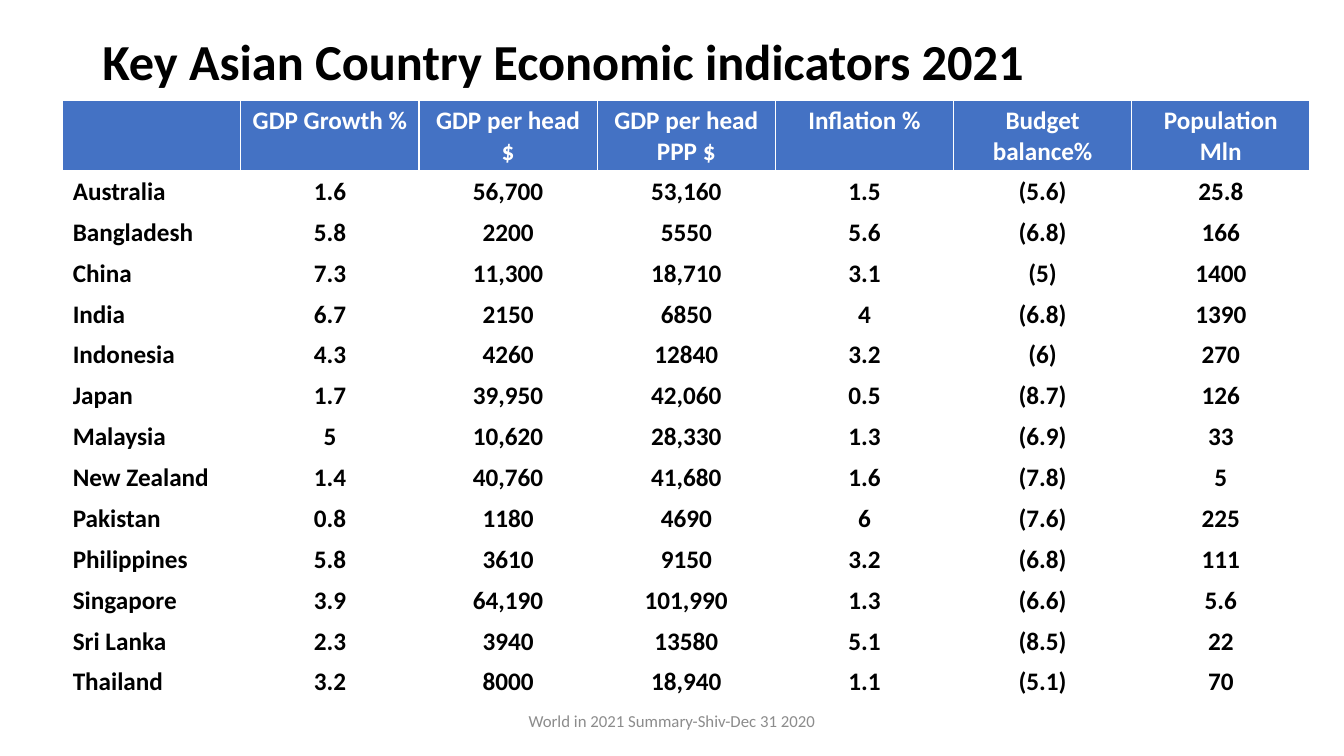
import pptx
import pptx.dml.color
import pptx.enum.text
import pptx.oxml
import pptx.oxml.ns
import pptx.util
from pptx.util import Cm

ALIGN = pptx.enum.text.PP_ALIGN
ANCHOR = pptx.enum.text.MSO_ANCHOR

HEADERS = ["", "GDP Growth %", "GDP per head $", "GDP per head PPP $",
           "Inflation %", "Budget balance%", "Population Mln"]
COUNTRIES = [
    ["Australia", "1.6", "56,700", "53,160", "1.5", "(5.6)", "25.8"],
    ["Bangladesh", "5.8", "2200", "5550", "5.6", "(6.8)", "166"],
    ["China", "7.3", "11,300", "18,710", "3.1", "(5)", "1400"],
    ["India", "6.7", "2150", "6850", "4", "(6.8)", "1390"],
    ["Indonesia", "4.3", "4260", "12840", "3.2", "(6)", "270"],
    ["Japan", "1.7", "39,950", "42,060", "0.5", "(8.7)", "126"],
    ["Malaysia", "5", "10,620", "28,330", "1.3", "(6.9)", "33"],
    ["New Zealand", "1.4", "40,760", "41,680", "1.6", "(7.8)", "5"],
    ["Pakistan", "0.8", "1180", "4690", "6", "(7.6)", "225"],
    ["Philippines", "5.8", "3610", "9150", "3.2", "(6.8)", "111"],
    ["Singapore", "3.9", "64,190", "101,990", "1.3", "(6.6)", "5.6"],
    ["Sri Lanka", "2.3", "3940", "13580", "5.1", "(8.5)", "22"],
    ["Thailand", "3.2", "8000", "18,940", "1.1", "(5.1)", "70"],
]


def color(value):
    return pptx.dml.color.RGBColor.from_string(value)


def put_text(tf, text, size=18, fill="000000", bold=False, align=ALIGN.LEFT,
             spacing=None, font="Calibri"):
    p = tf.paragraphs[0]
    p.alignment = align
    if spacing:
        p.line_spacing = spacing
    if not text:
        return
    r = p.add_run()
    r.text = text
    r.font.name = font
    r.font.size = pptx.util.Pt(size)
    r.font.bold = bold
    r.font.color.rgb = color(fill)


def set_borders(cell, fill, bottom):
    """Give the cell 1 pt borders, with its own width at the bottom."""
    tcPr = cell._tc.get_or_add_tcPr()
    widths = {"lnL": 1, "lnR": 1, "lnT": 1, "lnB": bottom}
    for i, (side, width) in enumerate(widths.items()):
        tcPr.insert(i, pptx.oxml.parse_xml(
            f'<a:{side} {pptx.oxml.ns.nsdecls("a")} w="{pptx.util.Pt(width)}">'
            f'<a:solidFill><a:srgbClr val="{fill}"/></a:solidFill></a:{side}>'))


class Deck:
    blue, white, black, grey = "4472C4", "FFFFFF", "000000", "8C8C8C"

    def __init__(self, prs):
        self.slide = prs.slides.add_slide(prs.slide_layouts[6])

    def text(self, text, left, top, width, height, **fmt):
        sp = self.slide.shapes.add_textbox(Cm(left), Cm(top), Cm(width), Cm(height))
        tf = sp.text_frame
        tf.word_wrap = True
        tf.vertical_anchor = ANCHOR.MIDDLE
        put_text(tf, text, **fmt)

    def table(self, rows, left, top, col_width, head_height, row_height):
        n_rows, n_cols = len(rows), len(rows[0])
        height = head_height + row_height * (n_rows - 1)
        tbl = self.slide.shapes.add_table(
            n_rows, n_cols, Cm(left), Cm(top),
            Cm(col_width * n_cols), Cm(height)).table
        tbl.horz_banding = False
        for col in tbl.columns:
            col.width = Cm(col_width)
        for i, values in enumerate(rows):
            head = i == 0
            tbl.rows[i].height = Cm(head_height if head else row_height)
            for j, value in enumerate(values):
                cell = tbl.cell(i, j)
                cell.fill.solid()
                cell.fill.fore_color.rgb = color(self.blue if head else self.white)
                set_borders(cell, self.white, bottom=3 if head else 1)
                put_text(cell.text_frame, value, bold=True,
                         fill=self.white if head else self.black,
                         align=ALIGN.CENTER if head or j else ALIGN.LEFT)


def main():
    prs = pptx.Presentation()
    prs.slide_width, prs.slide_height = Cm(33.87), Cm(19.05)
    deck = Deck(prs)

    # Title
    deck.text("Key Asian Country Economic indicators 2021", 2.33, 0.58, 29.21, 2.06,
              size=36, bold=True, spacing=0.9)

    # Indicators by country
    deck.table([HEADERS] + COUNTRIES, left=1.58, top=2.54, col_width=4.49,
               head_height=1.78, row_height=1.03)

    # Footer
    deck.text("World in 2021 Summary-Shiv-Dec 31 2020", 11.22, 17.66, 11.43, 1.01,
              size=12, fill=deck.grey, align=ALIGN.CENTER)

    prs.save("out.pptx")


if __name__ == "__main__":
    main()
